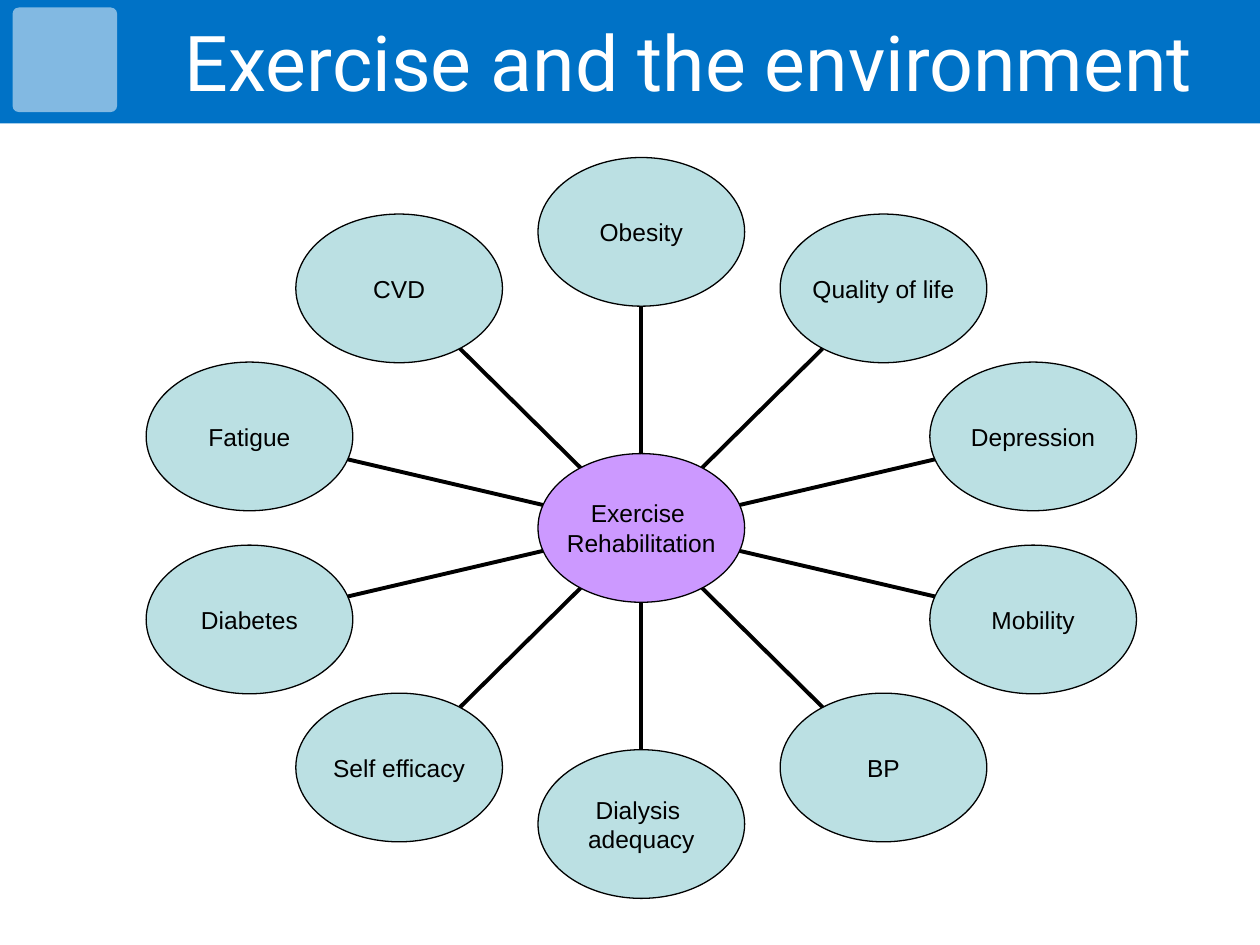
from math import cos, hypot, pi, sin

from lxml.etree import SubElement
from pptx import Presentation
from pptx.dml.color import RGBColor
from pptx.enum.shapes import MSO_CONNECTOR, MSO_SHAPE
from pptx.enum.text import MSO_ANCHOR, MSO_AUTO_SIZE, PP_ALIGN
from pptx.oxml.ns import qn
from pptx.util import Inches, Pt

TITLE = "Exercise and the environment"
HUB = ["Exercise ", "Rehabilitation"]
# Clockwise from the top
TOPICS = [
    ["Obesity"], ["Quality of life"], ["Depression"], ["Mobility"], ["BP"],
    ["Dialysis ", "adequacy"], ["Self efficacy"], ["Diabetes"], ["Fatigue"], ["CVD"],
]
COLORS = {"band": "0072C6", "badge": "82B9E2", "topic": "BBE0E3",
          "hub": "CC99FF", "ink": "000000", "title": "FFFFFF"}

# Inches
WIDTH, HEIGHT = 10, 7.5
BAND_HEIGHT = 0.98
CENTER_X, CENTER_Y = 5.09, 4.19
RING_X, RING_Y = 3.27, 2.35
OVAL_WIDTH, OVAL_HEIGHT = 1.64, 1.18


def color(name):
    return RGBColor.from_string(COLORS[name])


def add_filled(page, kind, left, top, width, height, fill):
    shape = page.shapes.add_shape(
        kind, Inches(left), Inches(top), Inches(width), Inches(height))
    shape.shadow.inherit = False
    shape.fill.solid()
    shape.fill.fore_color.rgb = color(fill)
    shape.line.fill.background()
    return shape


def add_oval(page, x, y, lines, fill):
    oval = add_filled(page, MSO_SHAPE.OVAL, x - OVAL_WIDTH / 2, y - OVAL_HEIGHT / 2,
                      OVAL_WIDTH, OVAL_HEIGHT, fill)
    oval.line.color.rgb = color("ink")
    oval.line.width = Pt(0.75)
    frame = oval.text_frame
    frame.margin_left = frame.margin_right = frame.margin_top = frame.margin_bottom = 0
    frame.word_wrap = False
    frame.vertical_anchor = MSO_ANCHOR.MIDDLE
    frame.text = "\n".join(lines)
    for para in frame.paragraphs:
        para.alignment = PP_ALIGN.CENTER
        para.font.size = Pt(14)
        para.font.name = "Arial"
        para.font.color.rgb = color("ink")


def add_spoke(page, dx, dy):
    # Share of the way from the hub's center to its edge
    edge = 1 / hypot(dx / (OVAL_WIDTH / 2), dy / (OVAL_HEIGHT / 2))
    ends = [Inches(center + share * delta)
            for share in (edge, 1 - edge)
            for center, delta in ((CENTER_X, dx), (CENTER_Y, dy))]
    spoke = page.shapes.add_connector(MSO_CONNECTOR.STRAIGHT, *ends)
    spoke.line.color.rgb = color("ink")
    spoke.line.width = Pt(2.25)
    SubElement(spoke._element.spPr, qn("a:effectLst"))


def add_title(page):
    title = page.shapes.title
    title.left, title.top, title.width, title.height = (
        Inches(0.97), 0, Inches(9), Inches(0.97))
    frame = title.text_frame
    frame.text = TITLE
    frame.word_wrap = True
    frame.auto_size = MSO_AUTO_SIZE.NONE
    frame.vertical_anchor = MSO_ANCHOR.MIDDLE
    para = frame.paragraphs[0]
    para.alignment = PP_ALIGN.CENTER
    para.font.size = Pt(44)
    para.font.name = "Roboto"
    para.font.color.rgb = color("title")
    # Bring the title in front of the band
    title._element.getparent().append(title._element)


def main():
    deck = Presentation()
    deck.slide_width, deck.slide_height = Inches(WIDTH), Inches(HEIGHT)
    page = deck.slides.add_slide(deck.slide_layouts[5])

    # Header band and plain badge
    add_filled(page, MSO_SHAPE.RECTANGLE, 0, 0, WIDTH, BAND_HEIGHT, "band")
    badge = add_filled(page, MSO_SHAPE.ROUNDED_RECTANGLE, 0.1, 0.06, 0.83, 0.83, "badge")
    badge.adjustments[0] = 0.06

    # Topics evenly spaced around the hub
    for index, lines in enumerate(TOPICS):
        angle = 2 * pi * index / len(TOPICS)
        dx, dy = RING_X * sin(angle), -RING_Y * cos(angle)
        add_spoke(page, dx, dy)
        add_oval(page, CENTER_X + dx, CENTER_Y + dy, lines, "topic")
    add_oval(page, CENTER_X, CENTER_Y, HUB, "hub")

    add_title(page)
    deck.save("out.pptx")


if __name__ == "__main__":
    main()
